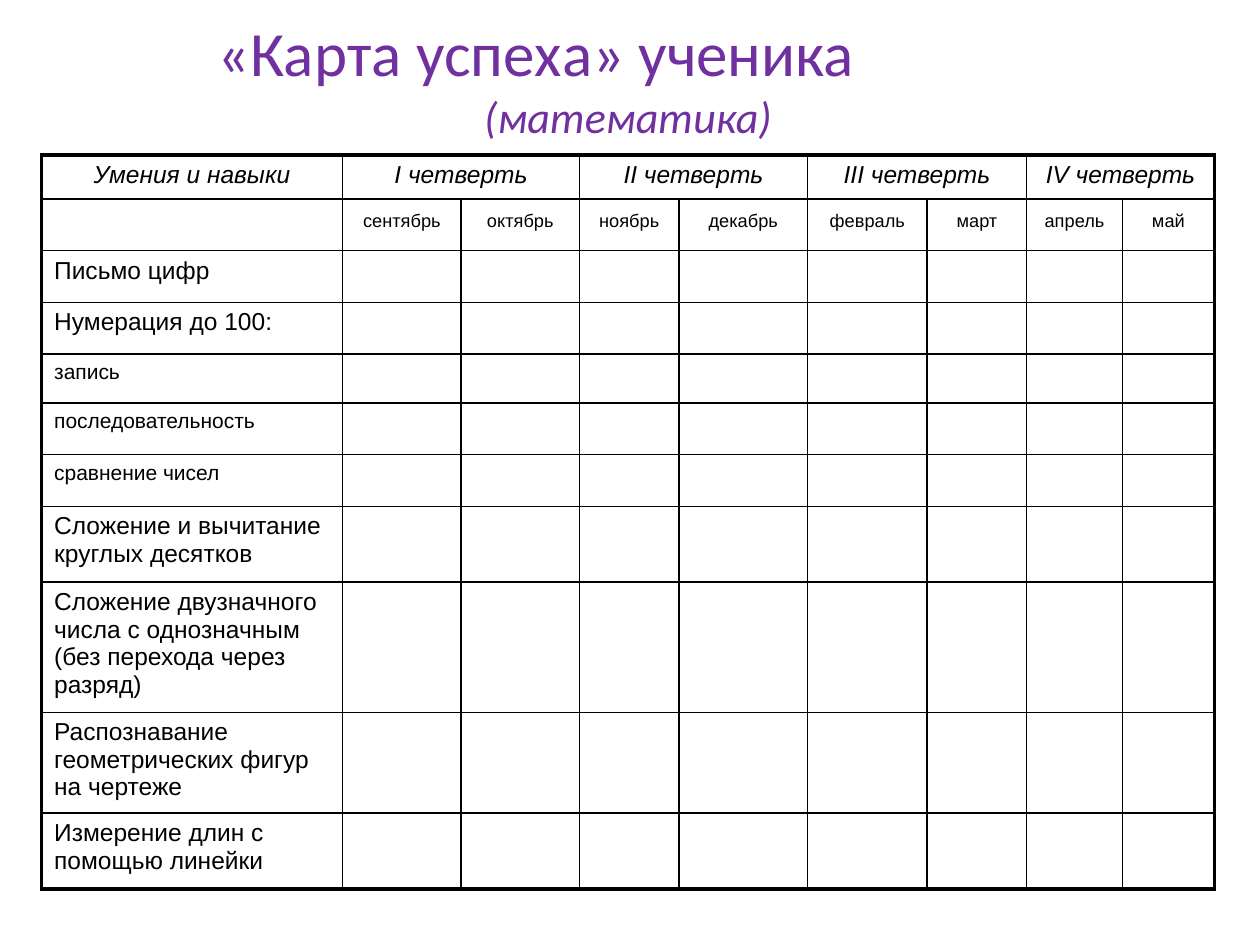
from lxml import etree
from pptx import Presentation
from pptx import util as u
from pptx.dml.color import RGBColor
from pptx.enum import text
from pptx.oxml import ns

BLACK, PURPLE = "000000", "7030A0"
THIN, THICK = 1, 2.25


def style(para, size, name, color, italic=False):
    font = para.font
    font.size, font.name, font.italic = u.Pt(size), name, italic
    font.color.rgb = RGBColor.from_string(color)


def add_border(cell, side, width):
    """Draw one cell side (L, R, T or B, called in that order)."""
    line = etree.SubElement(cell._tc.get_or_add_tcPr(), ns.qn(f"a:ln{side}"),
                            w=str(u.Pt(width)))
    fill = etree.SubElement(line, ns.qn("a:solidFill"))
    etree.SubElement(fill, ns.qn("a:srgbClr"), val=BLACK)


deck = Presentation()
deck.slide_width, deck.slide_height = u.Inches(10), u.Inches(7.5)
page = deck.slides.add_slide(deck.slide_layouts[6])

# Title: the first line is indented, the second is centred
box = page.shapes.add_textbox(u.Inches(0.33), u.Inches(0.25),
                              u.Inches(9.31), u.Inches(0.74))
frame = box.text_frame
frame.word_wrap = True
frame.vertical_anchor = text.MSO_ANCHOR.MIDDLE
heading = frame.paragraphs[0]
heading.text = "«Карта успеха» ученика"
heading._p.get_or_add_pPr().set("marL", str(u.Inches(1.3)))
style(heading, 36, "Calibri", PURPLE)
subject = frame.add_paragraph()
subject.text = "(математика)"
subject.alignment = text.PP_ALIGN.CENTER
style(subject, 25.2, "Calibri", PURPLE, italic=True)

# Table contents
quarters = ["I четверть", "II четверть", "III четверть", "IV четверть"]
months = ["сентябрь", "октябрь", "ноябрь", "декабрь",
          "февраль", "март", "апрель", "май"]
skills = [
    ("Письмо цифр", 14),
    ("Нумерация до 100:", 14),
    ("запись", 12),
    ("последовательность", 12),
    ("сравнение чисел", 12),
    ("Сложение и вычитание круглых десятков", 14),
    ("Сложение двузначного числа с однозначным (без перехода через разряд)", 14),
    ("Распознавание геометрических фигур на чертеже", 14),
    ("Измерение длин с помощью линейки", 14),
]
widths = [2.39, 0.94, 0.94, 0.79, 1.02, 0.95, 0.79, 0.76, 0.73]
heights = [0.35, 0.41, 0.41, 0.41, 0.39, 0.41, 0.41, 0.6, 1.02, 0.79, 0.6]
last_row, last_col = len(heights) - 1, len(widths) - 1

table = page.shapes.add_table(len(heights), len(widths),
                              u.Inches(0.33), u.Inches(1.23),
                              u.Inches(sum(widths)), u.Inches(sum(heights))).table
table.first_row = table.horz_banding = False
for column, width in zip(table.columns, widths):
    column.width = u.Inches(width)
for row, height in zip(table.rows, heights):
    row.height = u.Inches(height)

table.cell(0, 0).text = "Умения и навыки"
for i, quarter in enumerate(quarters):
    first = table.cell(0, 1 + 2 * i)
    first.merge(table.cell(0, 2 + 2 * i))
    first.text = quarter
for c, month in enumerate(months, 1):
    table.cell(1, c).text = month
for r, (skill, size) in enumerate(skills, 2):
    table.cell(r, 0).text = skill

for r in range(len(heights)):
    for c in range(len(widths)):
        cell = table.cell(r, c)
        para = cell.text_frame.paragraphs[0]
        size = 14
        if r == 1 and c > 0:
            size = 18
            # Months are set as raised, reduced text
            for span in para.runs:
                span._r.get_or_add_rPr().set("baseline", "20000")
        elif r > 1:
            size = skills[r - 2][1]
        style(para, size, "Arial", BLACK, italic=r == 0)
        if r < 2:
            para.alignment = text.PP_ALIGN.CENTER
        add_border(cell, "L", THICK if c == 0 else THIN)
        add_border(cell, "R", THICK if c == last_col or (r == 0 and c == last_col - 1) else THIN)
        add_border(cell, "T", THICK if r == 0 else THIN)
        add_border(cell, "B", THICK if r == last_row else THIN)
        cell.fill.background()

deck.save("out.pptx")
